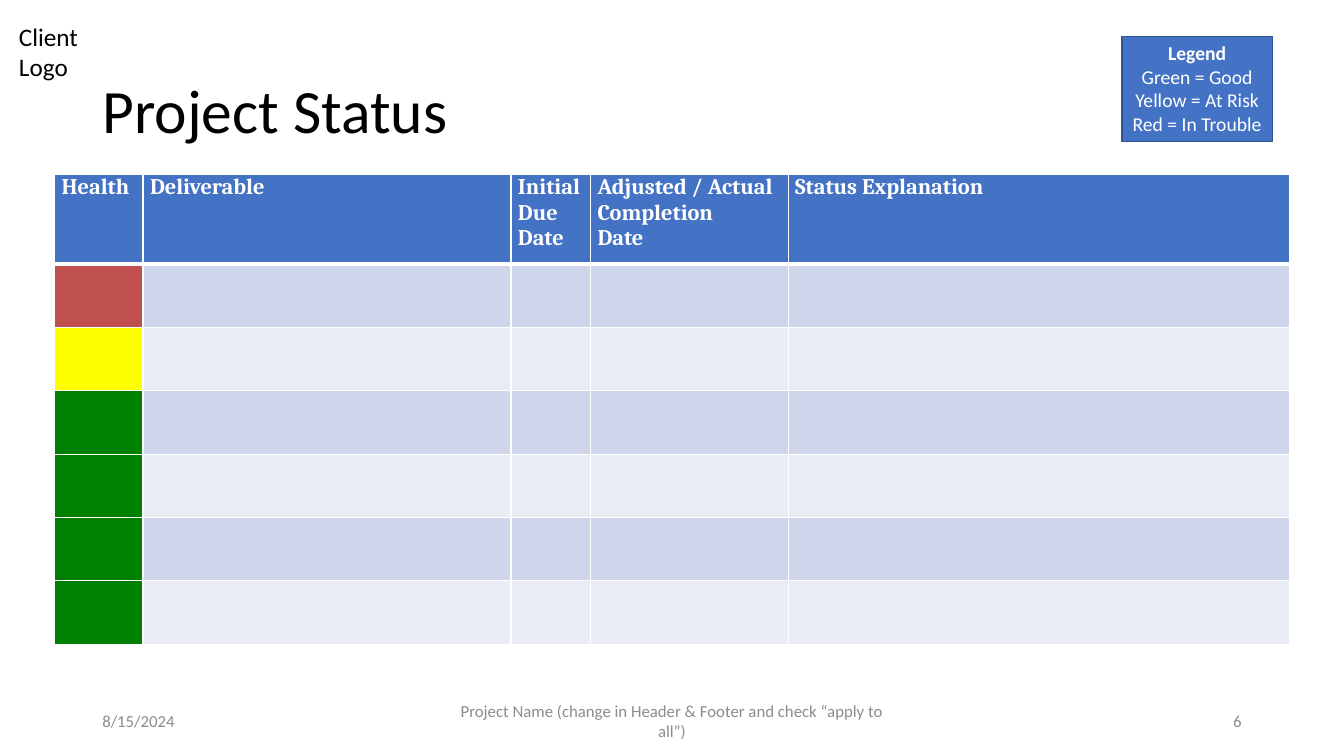
from lxml.etree import SubElement
from pptx import Presentation
from pptx.dml.color import RGBColor
from pptx.enum.shapes import MSO_SHAPE
from pptx.enum.text import MSO_ANCHOR, MSO_AUTO_SIZE, PP_ALIGN
from pptx.oxml.ns import qn
from pptx.util import Pt

BLACK = RGBColor(0x00, 0x00, 0x00)
WHITE = RGBColor(0xFF, 0xFF, 0xFF)
GRAY = RGBColor(0x8C, 0x8C, 0x8C)
BLUE = RGBColor(0x44, 0x72, 0xC4)
DARK_BLUE = RGBColor(0x32, 0x54, 0x91)
BANDS = [RGBColor(0xCF, 0xD5, 0xEA), RGBColor(0xE9, 0xEB, 0xF5)]
RED = RGBColor(0xC0, 0x50, 0x4D)
YELLOW = RGBColor(0xFF, 0xFF, 0x00)
GREEN = RGBColor(0x00, 0x80, 0x00)

HEADERS = ["Health", "Deliverable", "Initial\nDue\nDate",
           "Adjusted / Actual\nCompletion\nDate", "Status Explanation"]
COLUMN_WIDTHS = [63.2, 262.8, 56.9, 141.1, 358]
HEALTH = [RED, YELLOW, GREEN, GREEN, GREEN, GREEN]
HEADER_HEIGHT = 64.2
ROW_HEIGHT = 45.25
LEGEND = "Legend\nGreen = Good\nYellow = At Risk\nRed = In Trouble"


def format_text(frame, size, color, font="Calibri", align=PP_ALIGN.LEFT, bold=False):
    """Give every paragraph of a text frame the same look."""
    for paragraph in frame.paragraphs:
        paragraph.alignment = align
        paragraph.font.name = font
        paragraph.font.size = Pt(size)
        paragraph.font.bold = bold
        paragraph.font.color.rgb = color


def add_label(slide, box, text, size, color, align=PP_ALIGN.LEFT, anchor=MSO_ANCHOR.TOP):
    """Add a wrapping text box in the given box."""
    frame = slide.shapes.add_textbox(*map(Pt, box)).text_frame
    frame.word_wrap = True
    frame.vertical_anchor = anchor
    frame.text = text
    format_text(frame, size, color, align=align)


def set_borders(cell, bottom=1, top=1):
    """Draw white borders round a cell."""
    properties = cell._tc.get_or_add_tcPr()
    for tag, width in (("a:lnL", 1), ("a:lnR", 1), ("a:lnT", top), ("a:lnB", bottom)):
        line = SubElement(properties, qn(tag), w=str(Pt(width)))
        fill = SubElement(line, qn("a:solidFill"))
        SubElement(fill, qn("a:srgbClr"), val=str(WHITE))


def fill_cell(cell, color):
    """Fill a cell with a solid colour."""
    cell.fill.solid()
    cell.fill.fore_color.rgb = color


def add_status_table(slide, left, top):
    """Add the deliverables table with its health column."""
    height = HEADER_HEIGHT + ROW_HEIGHT * len(HEALTH)
    table = slide.shapes.add_table(
        len(HEALTH) + 1, len(HEADERS), Pt(left), Pt(top),
        Pt(sum(COLUMN_WIDTHS)), Pt(height)).table
    for column, width in zip(table.columns, COLUMN_WIDTHS):
        column.width = Pt(width)
    for index, row in enumerate(table.rows):
        row.height = Pt(ROW_HEIGHT if index else HEADER_HEIGHT)
    for index, header in enumerate(HEADERS):
        cell = table.cell(0, index)
        set_borders(cell, bottom=3)
        fill_cell(cell, BLUE)
        cell.margin_left = cell.margin_right = Pt(5)
        cell.margin_top = cell.margin_bottom = Pt(0)
        cell.text = header
        format_text(cell.text_frame, 16, WHITE, font="Cambria", bold=True)
    for row, health in enumerate(HEALTH, start=1):
        for column in range(len(HEADERS)):
            cell = table.cell(row, column)
            set_borders(cell, top=3 if row == 1 else 1)
            fill_cell(cell, BANDS[(row - 1) % 2] if column else health)


def place_title(slide, box, text):
    """Move and format the title placeholder."""
    title = slide.shapes.title
    title.left, title.top, title.width, title.height = map(Pt, box)
    frame = title.text_frame
    frame.text = text
    frame.auto_size = MSO_AUTO_SIZE.NONE
    frame.vertical_anchor = MSO_ANCHOR.MIDDLE
    frame.paragraphs[0].line_spacing = 0.9
    format_text(frame, 44, BLACK)


def add_footer(slide, left, top, width, height):
    """Add the date, project name and page number along the bottom."""
    side, middle = 216, 324
    parts = [
        (left, side, "8/15/2024", PP_ALIGN.LEFT),
        (left + (width - middle) / 2, middle,
         "Project Name (change in Header & Footer and check “apply to all”)",
         PP_ALIGN.CENTER),
        (left + width - side, side, "6", PP_ALIGN.RIGHT),
    ]
    for part_left, part_width, text, align in parts:
        add_label(slide, (part_left, top, part_width, height), text, 12, GRAY,
                  align, MSO_ANCHOR.MIDDLE)


def add_legend(slide, box):
    """Add the key to the health colours."""
    legend = slide.shapes.add_shape(MSO_SHAPE.RECTANGLE, *map(Pt, box))
    legend.shadow.inherit = False
    legend.fill.solid()
    legend.fill.fore_color.rgb = BLUE
    legend.line.color.rgb = DARK_BLUE
    legend.line.width = Pt(1)
    frame = legend.text_frame
    frame.word_wrap = False
    frame.vertical_anchor = MSO_ANCHOR.TOP
    frame.text = LEGEND
    format_text(frame, 14, WHITE, align=PP_ALIGN.CENTER)
    frame.paragraphs[0].font.bold = True


def add_status_slide(presentation):
    """Build the project status slide."""
    slide = presentation.slides.add_slide(presentation.slide_layouts[5])
    add_label(slide, (6.5, 11.5, 80, 51), "Client\vLogo", 18, BLACK)
    add_status_table(slide, 39, 124.5)
    place_title(slide, (66, 28.75, 828, 104.4), "Project Status")
    add_footer(slide, 66, 500.5, 828, 28.75)
    add_legend(slide, (801.5, 26, 107.3, 75))


def main():
    """Create and save the presentation."""
    presentation = Presentation()
    presentation.slide_width = Pt(960)
    presentation.slide_height = Pt(540)
    add_status_slide(presentation)
    presentation.save("out.pptx")


if __name__ == "__main__":
    main()
